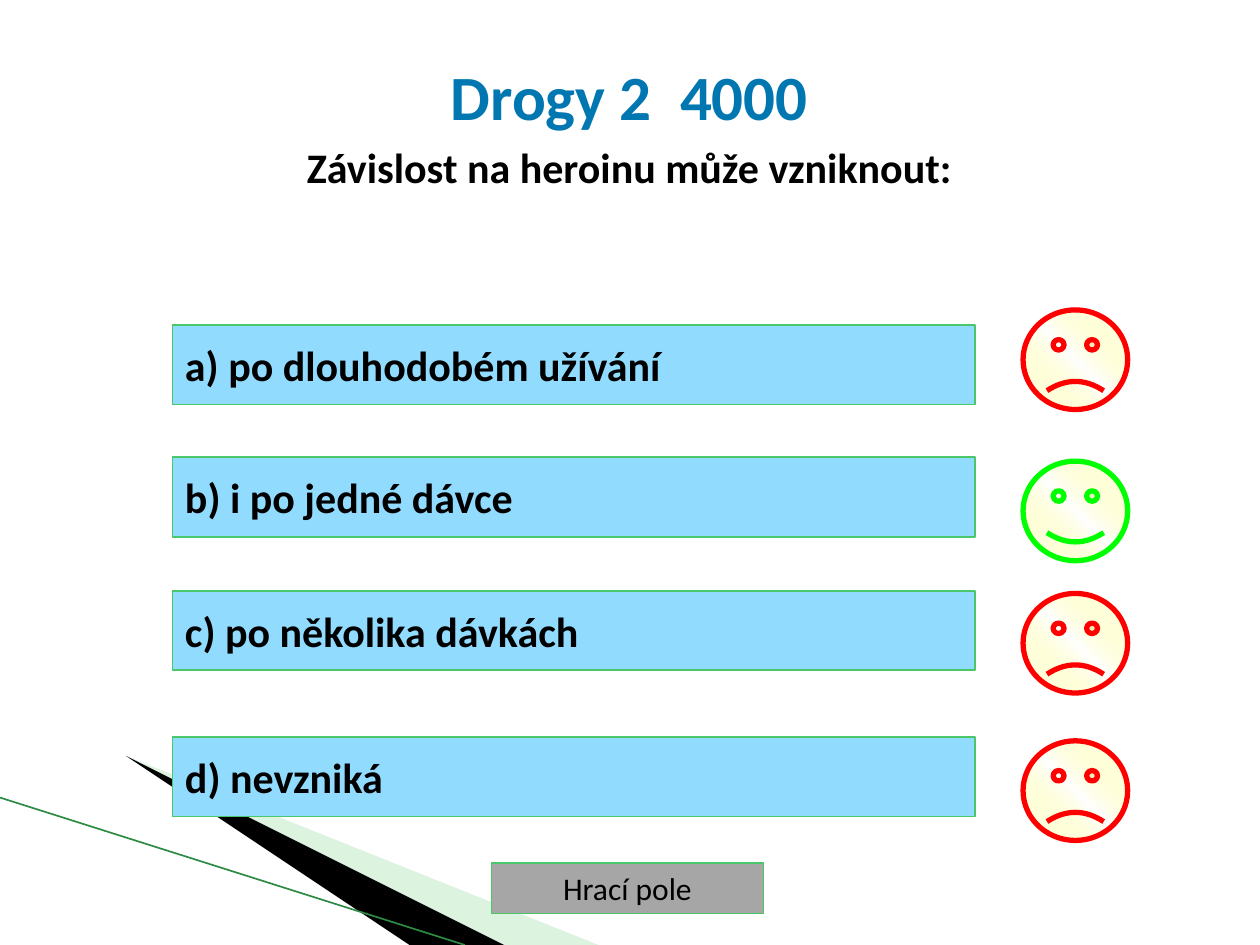
import pptx
import pptx.dml.color
import pptx.enum.shapes
import pptx.enum.text
import pptx.oxml
import pptx.oxml.ns
import pptx.util
from lxml import etree

RGB = pptx.dml.color.RGBColor
SHAPE = pptx.enum.shapes.MSO_SHAPE
ALIGN = pptx.enum.text.PP_ALIGN
ANCHOR = pptx.enum.text.MSO_ANCHOR
Inches, Pt = pptx.util.Inches, pptx.util.Pt

TITLE_BLUE = RGB(0x00, 0x77, 0xB1)
ANSWER_BLUE = RGB(0x91, 0xDB, 0xFF)
BORDER_GREEN = RGB(0x49, 0xC7, 0x6A)
WEDGE_GREEN = RGB(0xA5, 0xE1, 0xAF)
EDGE_GREEN = RGB(0x2E, 0x8B, 0x45)
BUTTON_GRAY = RGB(0xA6, 0xA6, 0xA6)
BLACK = RGB(0, 0, 0)
RIGHT_GREEN = RGB(0, 0xFF, 0)
WRONG_RED = RGB(0xFF, 0, 0)

FONT = "Calibri"
SMILE = 0.0465
FACE_GRADIENT = (
    f'<a:gradFill {pptx.oxml.ns.nsdecls("a")} rotWithShape="1"><a:gsLst>'
    '<a:gs pos="0"><a:srgbClr val="FFFFFF"/></a:gs>'
    '<a:gs pos="50000"><a:srgbClr val="FFFF66"><a:alpha val="0"/></a:srgbClr></a:gs>'
    '<a:gs pos="100000"><a:srgbClr val="FFFFFF"/></a:gs>'
    '</a:gsLst><a:lin ang="18900000" scaled="1"/></a:gradFill>')

# Answer text, bar top, face top, whether it is correct
ANSWERS = [
    ("a) po dlouhodobém užívání", 2.58, 2.46, False),
    ("b) i po jedné dávce", 3.63, 3.66, True),
    ("c) po několika dávkách", 4.69, 4.71, False),
    ("d) nevzniká", 5.85, 5.88, False),
]


def set_font(paragraph, size, color, bold):
    font = paragraph.font
    font.name, font.size, font.bold = FONT, Pt(size), bold
    font.color.rgb = color


def add_wedge(slide, points, color, alpha=None):
    builder = slide.shapes.build_freeform(*points[0], scale=Inches(1))
    builder.add_line_segments(points[1:], close=True)
    wedge = builder.convert_to_shape()
    wedge.shadow.inherit = False
    wedge.fill.solid()
    wedge.fill.fore_color.rgb = color
    wedge.line.fill.background()
    if alpha is not None:
        tint = wedge.fill._xPr.find(".//" + pptx.oxml.ns.qn("a:srgbClr"))
        etree.SubElement(tint, pptx.oxml.ns.qn("a:alpha")).set("val", str(alpha * 1000))


def add_corner(slide, left, top, right, bottom):
    """Wedges and edge line in the lower left corner."""
    tip = (left + 0.55, top + 0.17)
    add_wedge(slide, [tip, (right, bottom), (right - 1.39, bottom)], WEDGE_GREEN, 40)
    add_wedge(slide, [tip, (right - 1.38, bottom), (right - 2.23, bottom)], BLACK)
    edge = slide.shapes.add_connector(
        pptx.enum.shapes.MSO_CONNECTOR.STRAIGHT,
        Inches(left), Inches(top), Inches(right - 2.24), Inches(bottom))
    edge.line.color.rgb = EDGE_GREEN
    edge.line.width = Pt(0.95)
    etree.SubElement(edge._element.spPr, pptx.oxml.ns.qn("a:effectLst"))


def add_heading(slide, left, top, width, height):
    """Topic with its value, and the question below."""
    heading = slide.shapes.title
    heading.left, heading.top = Inches(left), Inches(top)
    heading.width, heading.height = Inches(width), Inches(height)
    frame = heading.text_frame
    frame.auto_size = pptx.enum.text.MSO_AUTO_SIZE.NONE
    frame.vertical_anchor = ANCHOR.TOP
    frame.text = "Drogy 2  4000\nZávislost na heroinu může vzniknout:"
    topic, question = frame.paragraphs
    set_font(topic, 36, TITLE_BLUE, True)
    set_font(question, 24, BLACK, True)
    question.space_before = Pt(4.8)
    for paragraph in frame.paragraphs:
        paragraph.alignment = ALIGN.CENTER


def add_button(slide, left, top, width, height, label, color, border, size, bold, align):
    button = slide.shapes.add_shape(
        SHAPE.ACTION_BUTTON_CUSTOM,
        Inches(left), Inches(top), Inches(width), Inches(height))
    button.shadow.inherit = False
    button.fill.solid()
    button.fill.fore_color.rgb = color
    button.line.color.rgb = BORDER_GREEN
    button.line.width = Pt(border)
    frame = button.text_frame
    frame.word_wrap = False
    frame.vertical_anchor = ANCHOR.MIDDLE
    frame.text = label
    frame.paragraphs[0].alignment = align
    set_font(frame.paragraphs[0], size, BLACK, bold)


def add_face(slide, left, top, width, height, correct):
    face = slide.shapes.add_shape(
        SHAPE.SMILEY_FACE, Inches(left), Inches(top), Inches(width), Inches(height))
    face.shadow.inherit = False
    face.adjustments[0] = SMILE if correct else -SMILE
    face.line.color.rgb = RIGHT_GREEN if correct else WRONG_RED
    face.line.width = Pt(3)
    geometry = face._element.spPr.find(pptx.oxml.ns.qn("a:prstGeom"))
    geometry.addnext(pptx.oxml.parse_xml(FACE_GRADIENT))


def add_answers(slide, left, right):
    """Answer bars, each with a face that marks it right or wrong."""
    for label, bar_top, face_top, correct in ANSWERS:
        add_button(slide, left, bar_top, 6.37, 0.63, label,
                   ANSWER_BLUE, 1, 24, True, ALIGN.LEFT)
        add_face(slide, right - 0.83, face_top, 0.83, 0.79, correct)


def main():
    deck = pptx.Presentation()
    deck.slide_width, deck.slide_height = Inches(10), Inches(7.5)
    slide = deck.slides.add_slide(deck.slide_layouts[5])
    add_corner(slide, 0, 6.33, 5.93, 7.5)
    add_heading(slide, 0.39, 0.41, 9.21, 0.75)
    add_answers(slide, 1.37, 8.95)
    # Way back to the game board
    add_button(slide, 3.9, 6.85, 2.16, 0.4, "Hrací pole",
               BUTTON_GRAY, 0.75, 18, False, ALIGN.CENTER)
    deck.save("out.pptx")


if __name__ == "__main__":
    main()
